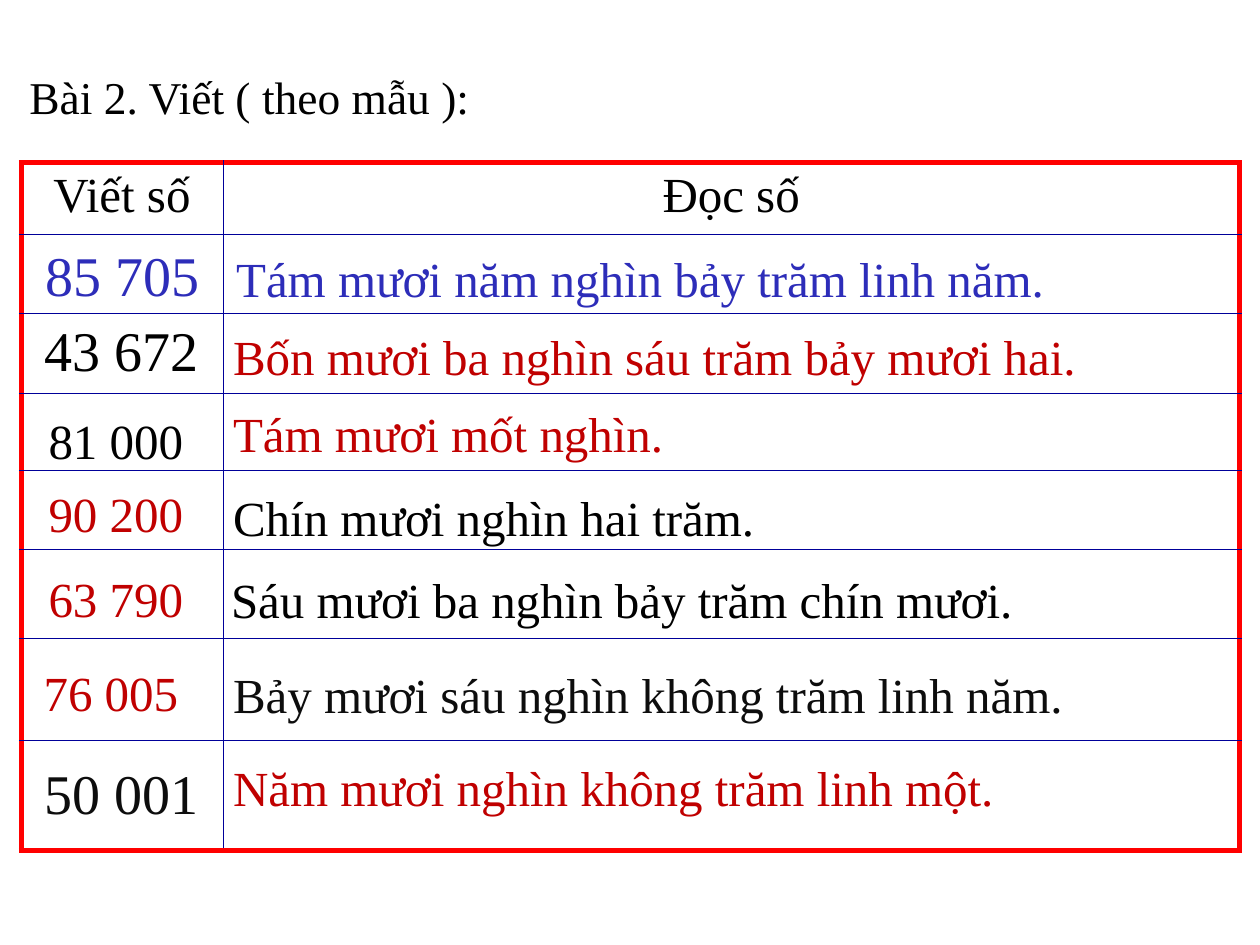
import pptx
import pptx.dml.color
import pptx.enum.text
import pptx.oxml
import pptx.oxml.ns
import pptx.util

Cm = pptx.util.Cm
RGB = pptx.dml.color.RGBColor
ALIGN = pptx.enum.text.PP_ALIGN
ANCHOR = pptx.enum.text.MSO_ANCHOR

BLACK = RGB(0x00, 0x00, 0x00)
INK = RGB(0x0D, 0x0D, 0x0D)
WHITE = RGB(0xFF, 0xFF, 0xFF)
CRIMSON = RGB(0xC0, 0x00, 0x00)
BLUE = RGB(0x2D, 0x2D, 0xB9)
FRAME = (RGB(0xFF, 0x00, 0x00), 3)
GRID = (RGB(0x00, 0x00, 0x99), 0.25)


def write_text(frame, text, font="Times New Roman", size=28, color=BLACK,
               align=ALIGN.LEFT, anchor=ANCHOR.TOP, wrap=True):
    frame.word_wrap = wrap
    frame.vertical_anchor = anchor
    para = frame.paragraphs[0]
    para.alignment = align
    span = para.add_run()
    span.text = text
    span.font.name = font
    span.font.size = pptx.util.Pt(size)
    span.font.color.rgb = color


class Worksheet:
    """Holds the deck, its current page and the table style."""

    def __init__(self, width, height):
        self.deck = pptx.Presentation()
        self.deck.slide_width, self.deck.slide_height = Cm(width), Cm(height)
        self.page = self.deck.slides.add_slide(self.deck.slide_layouts[5])

    def title(self, text, left, top, width, height, **style):
        box = self.page.shapes.title
        box.left, box.top, box.width, box.height = map(Cm, (left, top, width, height))
        write_text(box.text_frame, text, **style)

    def label(self, text, left, top, width, height=1.45, **style):
        box = self.page.shapes.add_textbox(*map(Cm, (left, top, width, height)))
        write_text(box.text_frame, text, **style)

    def border(self, cell, index, side, line):
        color, weight = line
        edge = pptx.oxml.parse_xml(
            f'<a:ln{side} {pptx.oxml.ns.nsdecls("a")} w="{int(weight * 12700)}">'
            f'<a:solidFill><a:srgbClr val="{color}"/></a:solidFill></a:ln{side}>')
        cell._tc.get_or_add_tcPr().insert(index, edge)

    def grid(self, left, top, widths, heights):
        shape = self.page.shapes.add_table(
            len(heights), len(widths), Cm(left), Cm(top),
            Cm(sum(widths)), Cm(sum(heights)))
        table = shape.table
        table.first_row = table.horz_banding = False
        for column, width in zip(table.columns, widths):
            column.width = Cm(width)
        last_row, last_column = len(heights) - 1, len(widths) - 1
        for r, height in enumerate(heights):
            table.rows[r].height = Cm(height)
            for c in range(len(widths)):
                cell = table.cell(r, c)
                cell.fill.solid()
                cell.fill.fore_color.rgb = WHITE
                outer = {"L": c == 0, "R": c == last_column,
                         "T": r == 0, "B": r == last_row}
                for index, (side, is_outer) in enumerate(outer.items()):
                    self.border(cell, index, side, FRAME if is_outer else GRID)
        return table

    def cell_text(self, cell, text, anchor=ANCHOR.TOP, **style):
        write_text(cell.text_frame, text, align=ALIGN.CENTER, **style)
        cell.vertical_anchor = anchor


def main():
    sheet = Worksheet(25.4, 19.05)
    sheet.title("Bài 2. Viết ( theo mẫu ):", 0.3, 1.27, 9.47, 1.37,
                size=26, align=ALIGN.CENTER, wrap=False)

    # Table with its headings and the two numbers held in cells
    table = sheet.grid(0.43, 3.28, [4.06, 20.5],
                       [1.44, 1.59, 1.61, 1.55, 1.61, 1.78, 2.06, 2.22])
    sheet.cell_text(table.cell(0, 0), "Viết số")
    sheet.cell_text(table.cell(0, 1), "Đọc số")
    sheet.cell_text(table.cell(2, 0), "43 672", ANCHOR.MIDDLE, size=32)
    sheet.cell_text(table.cell(7, 0), "50 001", ANCHOR.MIDDLE, size=32, color=INK)

    # Worked example
    example = dict(color=BLUE, align=ALIGN.CENTER, wrap=False)
    sheet.label("85 705", 0.64, 4.72, 3.66, 1.63, size=32, **example)
    sheet.label("Tám mươi năm nghìn bảy trăm linh năm.", 4.42, 4.88, 16.97, **example)

    # Numbers in digits
    for text, top, width, color in [
        ("81 000", 8.15, 3.81, BLACK),
        ("90 200", 9.63, 3.81, CRIMSON),
        ("63 790", 11.33, 3.81, CRIMSON),
        ("76 005", 13.23, 3.61, CRIMSON),
    ]:
        sheet.label(text, 0.43, top, width, color=color, align=ALIGN.CENTER)

    # Numbers in words
    for text, top, color in [
        ("Bốn mươi ba nghìn sáu trăm bảy mươi hai.", 6.45, CRIMSON),
        ("Tám mươi mốt nghìn.", 8, CRIMSON),
        ("Chín mươi nghìn hai trăm.", 9.7, BLACK),
        ("Bảy mươi sáu nghìn không trăm linh năm.", 13.28, INK),
        ("Năm mươi nghìn không trăm linh một.", 15.14, CRIMSON),
    ]:
        sheet.label(text, 4.45, top, 20.32, color=color)
    sheet.label("Sáu mươi ba nghìn bảy trăm chín mươi.", 4.32, 11.35, 16.43,
                align=ALIGN.CENTER, wrap=False)

    sheet.deck.save("out.pptx")


if __name__ == "__main__":
    main()
